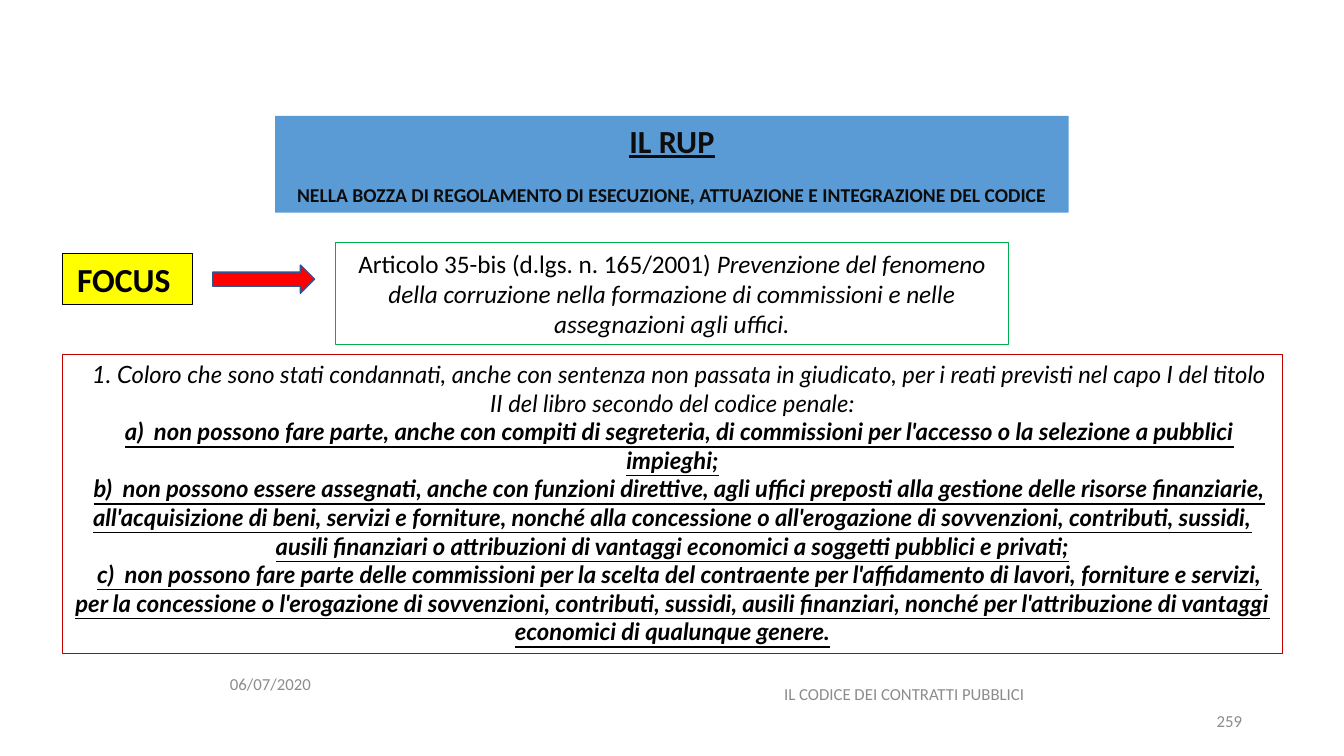
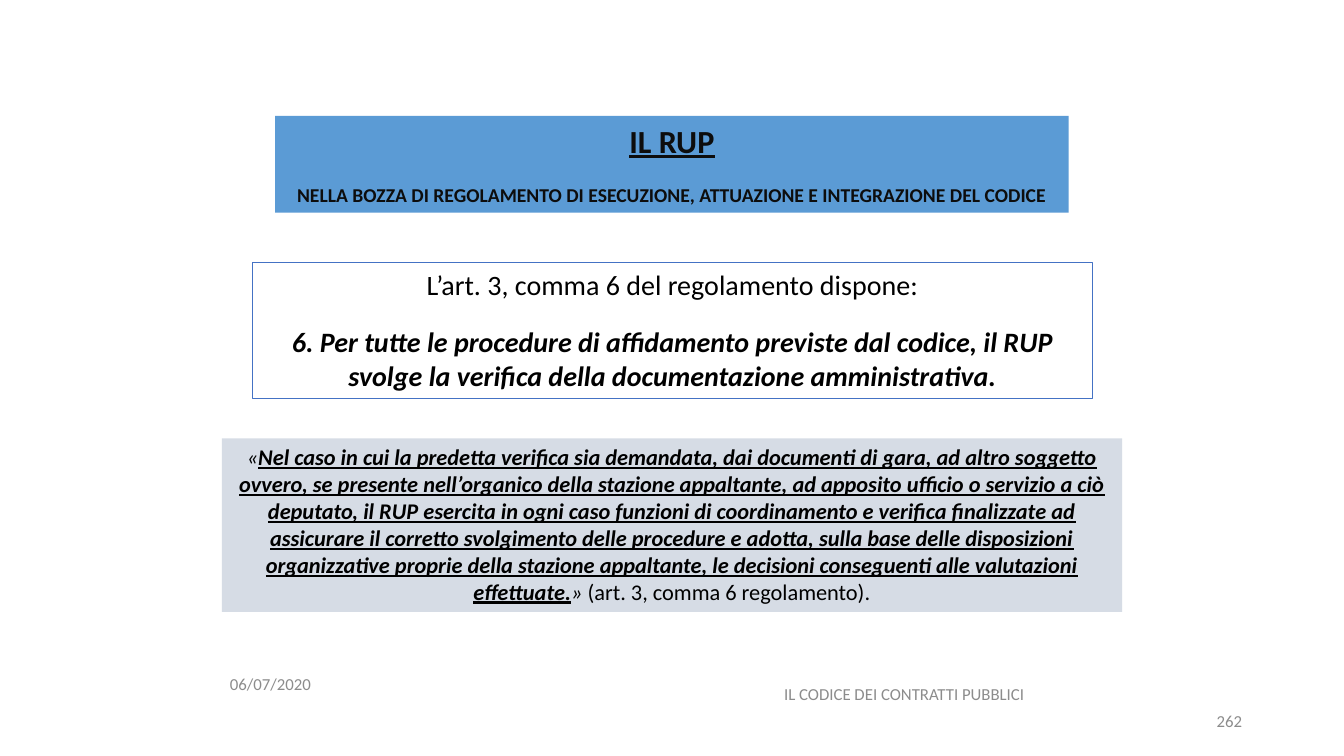
from copy import deepcopy
from lxml import etree
from pptx import Presentation
from pptx.dml.color import RGBColor as Rgb
from pptx.enum.shapes import MSO_SHAPE as Kind
from pptx.enum.text import MSO_ANCHOR as Anchor, MSO_AUTO_SIZE as Fit, PP_ALIGN as Align
from pptx.oxml.ns import qn
from pptx.util import Inches, Pt

HUES = {
    "band": "5B9BD5", "ink": "0D0D0D", "text": "000000", "foot": "8C8C8C",
    "green": "00B050", "wine": "C00000", "gold": "FFFF00", "red": "FF0000",
    "navy": "325491", "blue": "4472C4", "mist": "D6DCE5",
}
FONT = "Calibri"

# Shared title: one list of runs per paragraph, a run is (text, style letters)
TITLE = [
    [("IL RUP", "bu")],
    [("NELLA BOZZA DI REGOLAMENTO DI ESECUZIONE, ATTUAZIONE E INTEGRAZIONE DEL CODICE", "b")],
]
# Shared footers: layout placeholder index, box, alignment
DATE, NAME, PAGE = 10, 11, 12
FEET = {
    DATE: ((2.18, 6.58, 2.5, 0.4), Align.LEFT),
    NAME: ((7.14, 6.68, 3.66, 0.4), Align.CENTER),
    PAGE: ((9.42, 6.95, 3, 0.4), Align.RIGHT),
}


def hue(name):
    return Rgb.from_string(HUES[name])


def place(shape, box):
    shape.left, shape.top, shape.width, shape.height = map(Inches, box)


def paint(shape, fill=None, line=None, width=0.75):
    if fill:
        shape.fill.solid()
        shape.fill.fore_color.rgb = hue(fill)
    else:
        shape.fill.background()
    if line:
        shape.line.color.rgb = hue(line)
        shape.line.width = Pt(width)
    else:
        shape.line.fill.background()


def write(shape, paras, sizes, color="text", font=FONT, gap=0, indent=0,
          align=Align.CENTER, anchor=Anchor.TOP):
    """Fill a shape; sizes gives one point size per paragraph."""
    frame = shape.text_frame
    frame.word_wrap = True
    frame.auto_size = Fit.NONE
    frame.vertical_anchor = anchor
    for i, (runs, size) in enumerate(zip(paras, sizes)):
        para = frame.add_paragraph() if i else frame.paragraphs[0]
        para.text = ""
        para.alignment = align
        para.line_spacing = 1.0
        para.space_before = Pt(gap if i else 0)
        para.space_after = Pt(0)
        props = para._p.get_or_add_pPr()
        props.set("marL", "0")
        props.set("indent", str(Inches(indent)))
        etree.SubElement(props, qn("a:buNone"))
        for text, style in runs:
            run = para.add_run()
            run.text = text
            face = run.font
            face.name, face.size = font, Pt(size)
            face.color.rgb = hue(color)
            face.bold = "b" in style
            face.italic = "i" in style
            face.underline = "u" in style


def add_box(slide, box, fill=None, line=None, kind=Kind.RECTANGLE, width=0.75):
    shape = slide.shapes.add_shape(kind, *map(Inches, box))
    shape.shadow.inherit = False
    paint(shape, fill, line, width)
    return shape


def add_feet(slide, page):
    words = {DATE: "06/07/2020", NAME: "IL CODICE DEI CONTRATTI PUBBLICI", PAGE: page}
    for base in slide.slide_layout.placeholders:
        if base.placeholder_format.idx in FEET:
            slide.shapes.element.append(deepcopy(base.element))
    for shape in slide.placeholders:
        idx = shape.placeholder_format.idx
        if idx in FEET:
            box, align = FEET[idx]
            place(shape, box)
            shape.text_frame.text = ""
            write(shape, [[(words[idx], "")]], [12], "foot", align=align,
                  anchor=Anchor.MIDDLE)


def add_page(deck, page):
    """Add a slide with the title band and footers; return it and its body."""
    slide = deck.slides.add_slide(deck.slide_layouts[1])
    title, body = slide.shapes.title, slide.placeholders[1]
    place(title, (2.73, 1.15, 7.87, 0.96))
    paint(title, "band")
    write(title, TITLE, [23, 14], "ink", gap=17)
    add_feet(slide, page)
    return slide, body


def add_focus(deck):
    slide, body = add_page(deck, "259")

    # Focus label, arrow and article heading
    label = add_box(slide, (0.62, 2.52, 1.29, 0.5), "gold", "text")
    write(label, [[("FOCUS ", "b")]], [24])
    add_box(slide, (2.11, 2.63, 1.01, 0.28), "red", "navy", Kind.RIGHT_ARROW, 1)
    head = add_box(slide, (3.33, 2.41, 6.67, 1.01), line="green")
    write(head, [[
        ("Articolo 35-bis (d.lgs. n. 165/2001) ", ""),
        ("Prevenzione del fenomeno della corruzione nella formazione di commissioni e nelle assegnazioni agli uffici.", "i"),
    ]], [18])

    # Text of the article
    place(body, (0.62, 3.52, 12.1, 2.96))
    paint(body, line="wine")
    write(body, [
        [("1. Coloro che sono stati condannati, anche con sentenza non passata in giudicato, per i reati previsti nel capo I del titolo II del libro secondo del codice penale:", "i")],
        [("a)  non possono fare parte, anche con compiti di segreteria, di commissioni per l'accesso o la selezione a pubblici impieghi;", "biu")],
        [("b)  non possono essere assegnati, anche con funzioni direttive, agli uffici preposti alla gestione delle risorse finanziarie, all'acquisizione di beni, servizi e forniture, nonché alla concessione o all'erogazione di sovvenzioni, contributi, sussidi, ausili finanziari o attribuzioni di vantaggi economici a soggetti pubblici e privati;", "biu")],
        [("c)  non possono fare parte delle commissioni per la scelta del contraente per l'affidamento di lavori, forniture e servizi, per la concessione o l'erogazione di sovvenzioni, contributi, sussidi, ausili finanziari, nonché per l'attribuzione di vantaggi economici di qualunque genere.", "biu")],
    ], [17] * 4, font="Lato", indent=0.14)


def add_rule(deck):
    slide, body = add_page(deck, "262")

    # Rule
    place(body, (2.5, 2.6, 8.34, 1.35))
    paint(body, line="blue")
    write(body, [
        [("L’art. 3, comma 6 del regolamento dispone:", "")],
        [("6. Per tutte le procedure di affidamento previste dal codice, il RUP svolge la verifica della documentazione amministrativa.", "bi")],
    ], [20, 20], gap=17)

    # Quotation
    quote = add_box(slide, (2.2, 4.35, 8.93, 1.72), "mist")
    write(quote, [
        [("«", "i"),
         ("Nel caso in cui la predetta verifica sia demandata, dai documenti di gara, ad altro soggetto", "biu")],
        [("ovvero, se presente nell’organico della stazione appaltante, ad apposito ufficio o servizio a ciò deputato, il RUP esercita in ogni caso funzioni di coordinamento e verifica finalizzate ad assicurare il corretto svolgimento delle procedure e adotta, sulla base delle disposizioni organizzative proprie della stazione appaltante, le decisioni conseguenti alle valutazioni effettuate.", "biu"),
         ("» ", "i"),
         ("(art. 3, comma 6 regolamento).", "")],
    ], [16, 16])


def main():
    deck = Presentation()
    deck.slide_width, deck.slide_height = Inches(13.33), Inches(7.5)
    add_focus(deck)
    add_rule(deck)
    deck.save("out.pptx")


if __name__ == "__main__":
    main()
